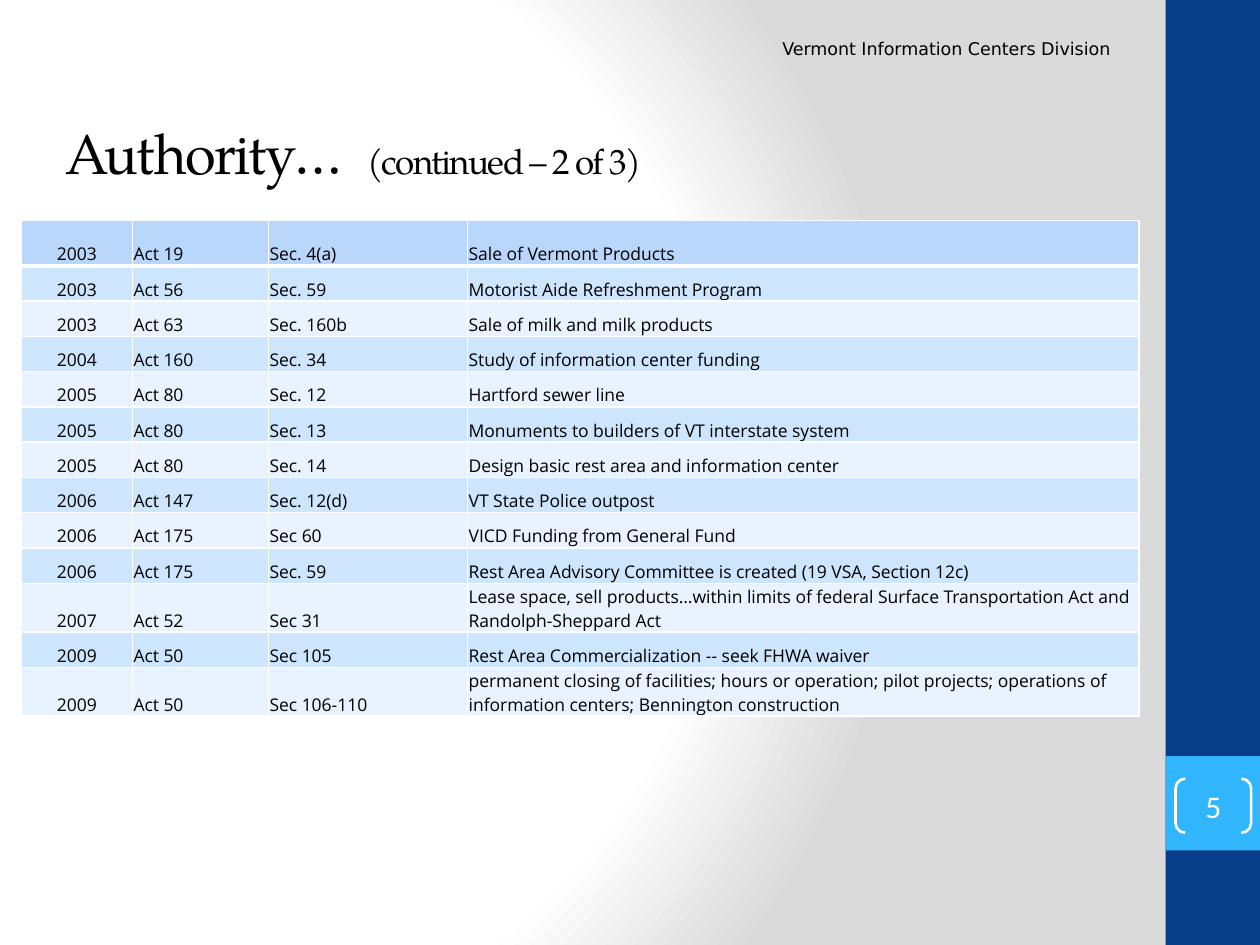
"""Build the second of three slides on the legal authority of the information centers."""
from lxml import etree
from pptx import Presentation
from pptx.dml.color import RGBColor
from pptx.enum.shapes import MSO_SHAPE
from pptx.enum.text import MSO_ANCHOR, MSO_AUTO_SIZE, PP_ALIGN
from pptx.oxml import parse_xml
from pptx.oxml.ns import nsdecls, qn
from pptx.util import Inches, Pt

RECT, BRACKET = MSO_SHAPE.RECTANGLE, MSO_SHAPE.DOUBLE_BRACKET
LEFT, CENTER, RIGHT = PP_ALIGN.LEFT, PP_ALIGN.CENTER, PP_ALIGN.RIGHT
MIDDLE, BOTTOM = MSO_ANCHOR.MIDDLE, MSO_ANCHOR.BOTTOM
FIXED = MSO_AUTO_SIZE.NONE

COLORS = {
    "white": "FFFFFF", "black": "000000", "gray": "DADADA",
    "navy": "073E87", "sky": "31B6FD",
    "head": "B9D6FB", "band": "CEE5FE", "pale": "E8F3FF",
}
WIDTHS = [0.88, 1.08, 1.58, 5.33]
HEAD, ROW = 0.36, 0.28
ACTS = [
    ("2003", "Act 19", "Sec. 4(a)", "Sale of Vermont Products"),
    ("2003", "Act 56", "Sec. 59", "Motorist Aide Refreshment Program"),
    ("2003", "Act 63", "Sec. 160b", "Sale of milk and milk products"),
    ("2004", "Act 160", "Sec. 34", "Study of information center funding"),
    ("2005", "Act 80", "Sec. 12", "Hartford sewer line"),
    ("2005", "Act 80", "Sec. 13", "Monuments to builders of VT interstate system"),
    ("2005", "Act 80", "Sec. 14", "Design basic rest area and information center"),
    ("2006", "Act 147", "Sec. 12(d)", "VT State Police outpost"),
    ("2006", "Act 175", "Sec 60", "VICD Funding from General Fund"),
    ("2006", "Act 175", "Sec. 59",
     "Rest Area Advisory Committee is created (19 VSA, Section 12c)"),
    ("2007", "Act 52", "Sec 31",
     "Lease space, sell products…within limits of federal Surface "
     "Transportation Act and Randolph-Sheppard Act"),
    ("2009", "Act 50", "Sec 105", "Rest Area Commercialization -- seek FHWA waiver"),
    ("2009", "Act 50", "Sec 106-110",
     "permanent closing of facilities; hours or operation; pilot projects; "
     "operations of information centers; Bennington construction"),
]


def tint(name):
    return RGBColor.from_string(COLORS[name])


def style(para, size, face, color="black", align=LEFT):
    para.alignment = align
    for run in para.runs:
        run.font.size, run.font.name, run.font.bold = Pt(size), face, False
        run.font.color.rgb = tint(color)


deck = Presentation()
deck.slide_width, deck.slide_height = Inches(10), Inches(7.5)
wide, high = deck.slide_width, deck.slide_height
slide = deck.slides.add_slide(deck.slide_layouts[5])
shapes = slide.shapes

slide.background.fill.solid()
back = slide.element.find(".//" + qn("p:bgPr"))
stops = "".join(
    f'<a:gs pos="{pos}"><a:srgbClr val="{COLORS[name]}"/></a:gs>'
    for pos, name in [(0, "white"), (75000, "white"), (100000, "gray")])
back.replace(back[0], parse_xml(
    f'<a:gradFill {nsdecls("a")} rotWithShape="1"><a:gsLst>{stops}</a:gsLst>'
    '<a:path path="circle"><a:fillToRect l="20000" t="50000" r="100000" b="50000"/>'
    '</a:path></a:gradFill>'))

side = int(wide * 0.925)
for name, top, tall in [("navy", 0, 1), ("sky", 0.8, 0.1)]:
    bar = shapes.add_shape(RECT, side, int(high * top), wide - side, int(high * tall))
    bar.shadow.inherit = False
    bar.fill.solid()
    bar.fill.fore_color.rgb = tint(name)
    bar.line.fill.background()

title = shapes.title
title.left, title.top = Inches(0.42), Inches(0.92)
title.width, title.height = Inches(6.42), Inches(0.58)
frame = title.text_frame
frame.auto_size, frame.vertical_anchor = FIXED, MIDDLE
para = frame.paragraphs[0]
for words in ["Authority…  ", "(continued – 2 of 3)"]:
    para.add_run().text = words
style(para, 32, "TeX Gyre Pagella")
para.runs[1].font.size = Pt(20)
for run in para.runs:
    run.font._element.set("spc", "-100")

tall = HEAD + ROW * (len(ACTS) - 1)
table = shapes.add_table(len(ACTS), len(WIDTHS), Inches(0.17), Inches(1.75),
                         Inches(sum(WIDTHS)), Inches(tall)).table
for col, width in zip(table.columns, WIDTHS):
    col.width = Inches(width)
for r, act in enumerate(ACTS):
    table.rows[r].height = Inches(ROW if r else HEAD)
    shade = "head" if r == 0 else "band" if r % 2 else "pale"
    for c, words in enumerate(act):
        cell = table.cell(r, c)
        cell.text_frame.text = words
        style(cell.text_frame.paragraphs[0], 10, "Open Sans",
              align=LEFT if c else CENTER)
        cell.vertical_anchor = BOTTOM
        cell.margin_left = cell.margin_right = cell.margin_top = Inches(0.01)
        cell.margin_bottom = 0
        props = cell._tc.get_or_add_tcPr()
        for edge in "LRTB":
            thick = 3 if (r, edge) in [(0, "B"), (1, "T")] else 1
            line = etree.SubElement(props, qn("a:ln" + edge), w=str(Pt(thick)))
            fill = etree.SubElement(line, qn("a:solidFill"))
            etree.SubElement(fill, qn("a:srgbClr"), val=COLORS["white"])
        cell.fill.solid()
        cell.fill.fore_color.rgb = tint(shade)

page = shapes.add_shape(BRACKET, Inches(9.33), Inches(6.18), Inches(0.6), Inches(0.43))
page.shadow.inherit = False
page.adjustments[0] = 0.18
page.fill.background()
page.line.color.rgb, page.line.width = tint("white"), Pt(1.5)
frame = page.text_frame
frame.margin_left = frame.margin_right = frame.margin_top = frame.margin_bottom = 0
frame.vertical_anchor = MIDDLE
frame.text = "5"
style(frame.paragraphs[0], 18, "Calibri", "white", CENTER)

label = shapes.add_textbox(Inches(5.83), Inches(0.25), Inches(3.08), Inches(0.27))
label.text_frame.word_wrap = True
label.text_frame.text = "Vermont Information Centers Division"
style(label.text_frame.paragraphs[0], 10, "DejaVu Sans", align=RIGHT)

deck.save("out.pptx")
